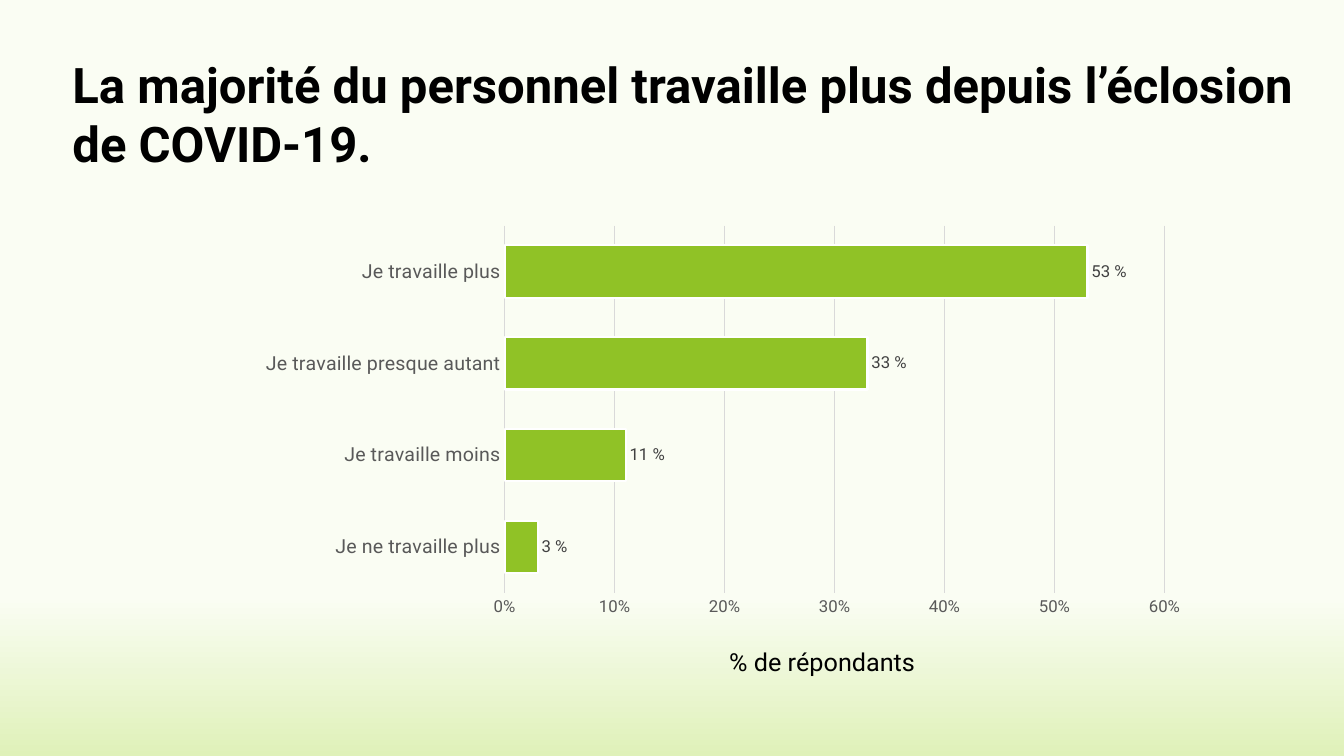
from lxml import etree
from pptx import Presentation
from pptx.chart.data import CategoryChartData as Data
from pptx.dml.color import RGBColor as Rgb
from pptx.enum.chart import XL_CHART_TYPE as Kind
from pptx.enum.chart import XL_LABEL_POSITION as Spot
from pptx.enum.chart import XL_TICK_MARK as Tick
from pptx.enum.text import MSO_ANCHOR as Anchor
from pptx.oxml.ns import qn
from pptx.util import Inches, Pt

WIDE, HIGH = Inches(13.33), Inches(7.5)
GREY, RULE = "595959", "D9D9D9"
HOURS = {
    "Je ne travaille plus": 0.03,
    "Je travaille moins": 0.11,
    "Je travaille presque autant": 0.33,
    "Je travaille plus": 0.53,
}


def tint(code):
    return Rgb.from_string(code)


def share(x, y, w, h):
    """Turn shares of the slide into lengths."""
    return int(x * WIDE), int(y * HIGH), int(w * WIDE), int(h * HIGH)


def style(font, size, color, **more):
    for name, value in {"name": "Roboto", "size": Pt(size), **more}.items():
        setattr(font, name, value)
    font.color.rgb = tint(color)


def rule(line, color, width):
    line.color.rgb = tint(color)
    line.width = Pt(width)


def place(part, index, **marks):
    """Give a chart part a manual layout, in shares of the chart."""
    for old in part.findall(qn("c:layout")):
        part.remove(old)
    layout = etree.Element(qn("c:layout"))
    manual = etree.SubElement(layout, qn("c:manualLayout"))
    for name, value in marks.items():
        etree.SubElement(manual, qn("c:" + name)).set("val", str(value))
    part.insert(index, layout)


def paint(slide):
    fill = slide.background.fill
    fill.gradient()
    fill.gradient_angle = 270
    stops = ((0.79, "FAFDF3"), (1, "DFF1B9"))
    for stop, (spot, color) in zip(fill.gradient_stops, stops):
        stop.position = spot
        stop.color.rgb = tint(color)


def add_head(slide, text, box):
    frame = slide.shapes.add_textbox(*share(*box)).text_frame
    form = {"word_wrap": True, "vertical_anchor": Anchor.TOP,
            "margin_top": Inches(0.08)}
    for name, value in form.items():
        setattr(frame, name, value)
    run = frame.paragraphs[0].add_run()
    run.text = text
    style(run.font, 35, "000000", bold=True)


def set_axes(chart):
    cats, vals = chart.category_axis, chart.value_axis
    for axis, size in ((cats, 14), (vals, 12)):
        axis.major_tick_mark = axis.minor_tick_mark = Tick.NONE
        style(axis.tick_labels.font, size, GREY)
    cats.has_major_gridlines = False
    rule(cats.format.line, RULE, 0.75)
    form = {"minimum_scale": 0, "maximum_scale": 0.6, "major_unit": 0.1,
            "has_major_gridlines": True}
    for name, value in form.items():
        setattr(vals, name, value)
    rule(vals.major_gridlines.format.line, RULE, 0.75)
    vals.format.line.fill.background()
    vals.tick_labels.number_format = "0%"
    vals.tick_labels.number_format_is_linked = False


def set_bars(plot):
    plot.gap_width, plot.overlap = 75, -25
    plot.vary_by_categories = False
    bars = plot.series[0]
    bars.format.fill.solid()
    bars.format.fill.fore_color.rgb = tint("90C226")
    rule(bars.format.line, "FFFFFF", 1.5)
    form = {"show_value": True, "number_format": "0\\ %",
            "number_format_is_linked": False, "position": Spot.OUTSIDE_END}
    for name, value in form.items():
        setattr(bars.data_labels, name, value)
    style(bars.data_labels.font, 12, "404040")


def add_bars(slide, values, title, box):
    data = Data(number_format="0%")
    data.categories = list(values)
    data.add_series("Series 1", list(values.values()))
    chart = slide.shapes.add_chart(
        Kind.BAR_CLUSTERED, *share(*box), data).chart
    chart.has_legend = False
    style(chart.font, 10, "000000")
    set_axes(chart)
    set_bars(chart.plots[0])

    # Title below the plot
    chart.has_title = True
    run = chart.chart_title.text_frame.paragraphs[0].add_run()
    run.text = title
    style(run.font, 18, "000000", bold=False)
    place(chart.chart_title._element, 1,
          xMode="edge", yMode="edge", x=0.55, y=0.92)

    # Plot area without its labels
    area = chart._chartSpace.find(".//" + qn("c:plotArea"))
    place(area, 0, layoutTarget="inner", xMode="edge", yMode="edge",
          x=0.339, y=0.036, w=0.633, h=0.781)


def main():
    deck = Presentation()
    deck.slide_width, deck.slide_height = WIDE, HIGH
    slide = deck.slides.add_slide(deck.slide_layouts[6])
    paint(slide)
    add_bars(slide, HOURS, "% de répondants", (0.1125, 0.276, 0.7757, 0.6307))
    add_head(slide, "La majorité du personnel travaille plus depuis "
             "l’éclosion de COVID-19.", (0.0465, 0.0613, 0.9257, 0.1253))
    deck.save("out.pptx")


if __name__ == "__main__":
    main()
